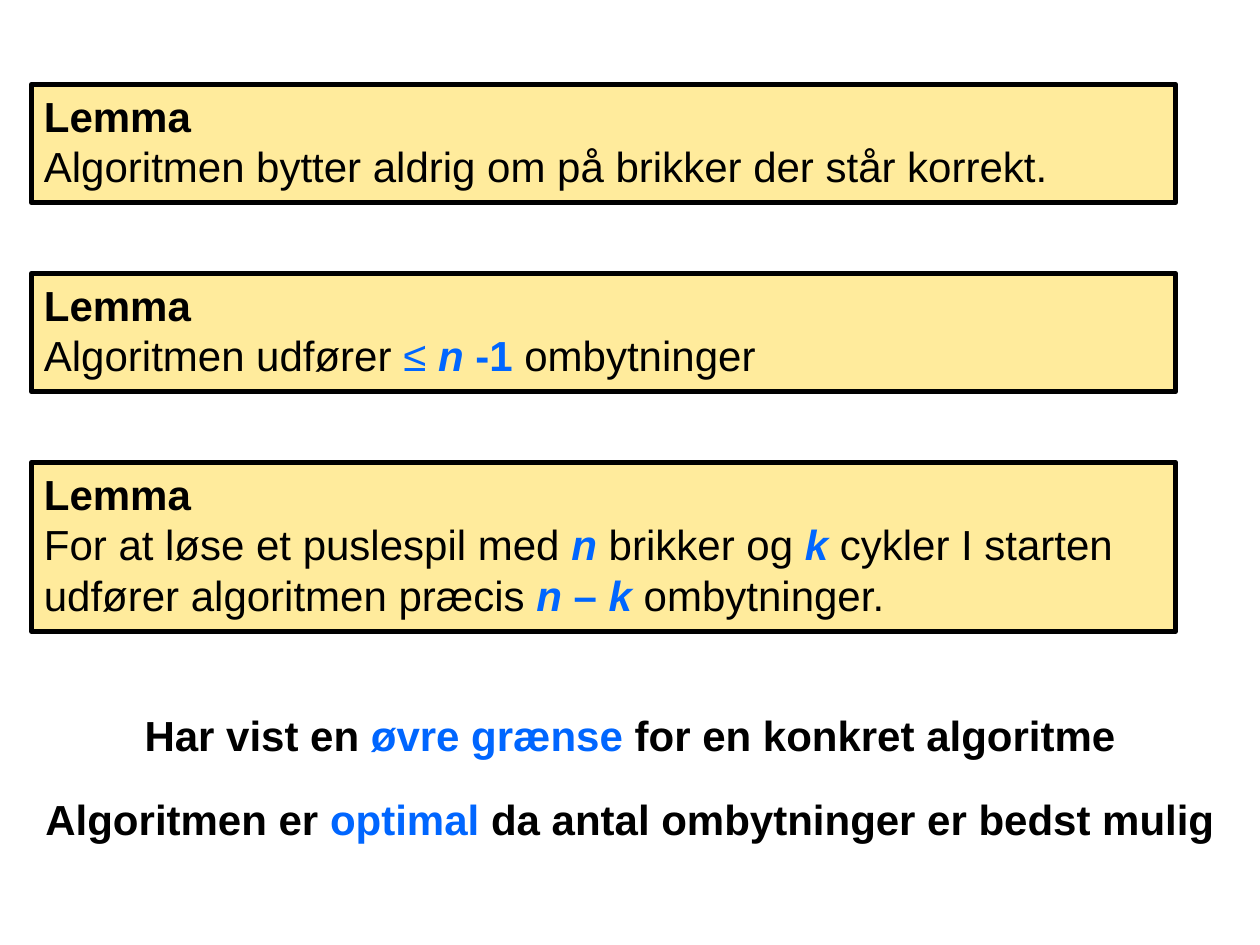
from lxml import etree
from pptx import Presentation
from pptx.dml.color import RGBColor
from pptx.enum import shapes, text
from pptx.oxml import ns
from pptx.util import Inches, Pt

BLACK = RGBColor(0x00, 0x00, 0x00)
BLUE = RGBColor(0x00, 0x66, 0xFF)
YELLOW = RGBColor(0xFF, 0xCC, 0x00)

PLAIN = {"bold": False, "italic": False, "color": BLACK}
BOLD = {"bold": True, "italic": False, "color": BLACK}
SYMBOL = {"bold": False, "italic": False, "color": BLUE}
TERM = {"bold": True, "italic": False, "color": BLUE}
VARIABLE = {"bold": True, "italic": True, "color": BLUE}


def add_runs(paragraph, runs):
    for wording, style in runs:
        run = paragraph.add_run()
        run.text = wording
        font = run.font
        font.color.rgb = style["color"]
        for name, value in {"name": "Arial", "size": Pt(24), "bold": style["bold"],
                            "italic": style["italic"]}.items():
            setattr(font, name, value)


prs = Presentation()
prs.slide_width, prs.slide_height = Inches(10), Inches(7.5)
slide = prs.slides.add_slide(prs.slide_layouts[6])

lemmas = [
    (0.94, [("Algoritmen bytter aldrig om på brikker der står korrekt.", PLAIN)]),
    (0.94, [("Algoritmen udfører ", PLAIN), ("≤ ", SYMBOL), ("n", VARIABLE),
            (" -1", TERM), (" ombytninger", PLAIN)]),
    (1.34, [("For at løse et puslespil med ", PLAIN), ("n", VARIABLE),
            (" brikker og ", PLAIN), ("k", VARIABLE),
            (" cykler I starten udfører algoritmen præcis ", PLAIN),
            ("n ", VARIABLE), ("–", TERM), (" k ", VARIABLE),
            ("ombytninger.", PLAIN)]),
]
for row, (height, statement) in enumerate(lemmas):
    lemma = slide.shapes.add_shape(
        shapes.MSO_SHAPE.RECTANGLE, Inches(0.25), Inches(0.67 + 1.5 * row),
        Inches(9.08), Inches(height))
    lemma.shadow.inherit = False
    lemma.fill.solid()
    lemma.fill.fore_color.rgb = YELLOW
    tint = lemma.fill._xPr.find(".//" + ns.qn("a:srgbClr"))
    etree.SubElement(tint, ns.qn("a:alpha"), val="39000")
    lemma.line.color.rgb = BLACK
    lemma.line.width = Pt(3)

    frame = lemma.text_frame
    frame.word_wrap = True
    frame.vertical_anchor = text.MSO_ANCHOR.TOP
    heading, body = frame.paragraphs[0], frame.add_paragraph()
    for paragraph, runs in ((heading, [("Lemma", BOLD)]), (body, statement)):
        paragraph.alignment = text.PP_ALIGN.LEFT
        add_runs(paragraph, runs)

conclusions = [
    (5.58, [("Har vist en ", BOLD), ("øvre grænse", TERM),
            (" for en konkret algoritme", BOLD)]),
    (6.25, [("Algoritmen er ", BOLD), ("optimal ", TERM),
            ("da antal ombytninger er bedst mulig", BOLD)]),
]
for top, runs in conclusions:
    conclusion = slide.shapes.add_textbox(0, Inches(top), Inches(10), Inches(0.5))
    frame = conclusion.text_frame
    frame.word_wrap = True
    frame.paragraphs[0].alignment = text.PP_ALIGN.CENTER
    add_runs(frame.paragraphs[0], runs)

prs.save("out.pptx")
